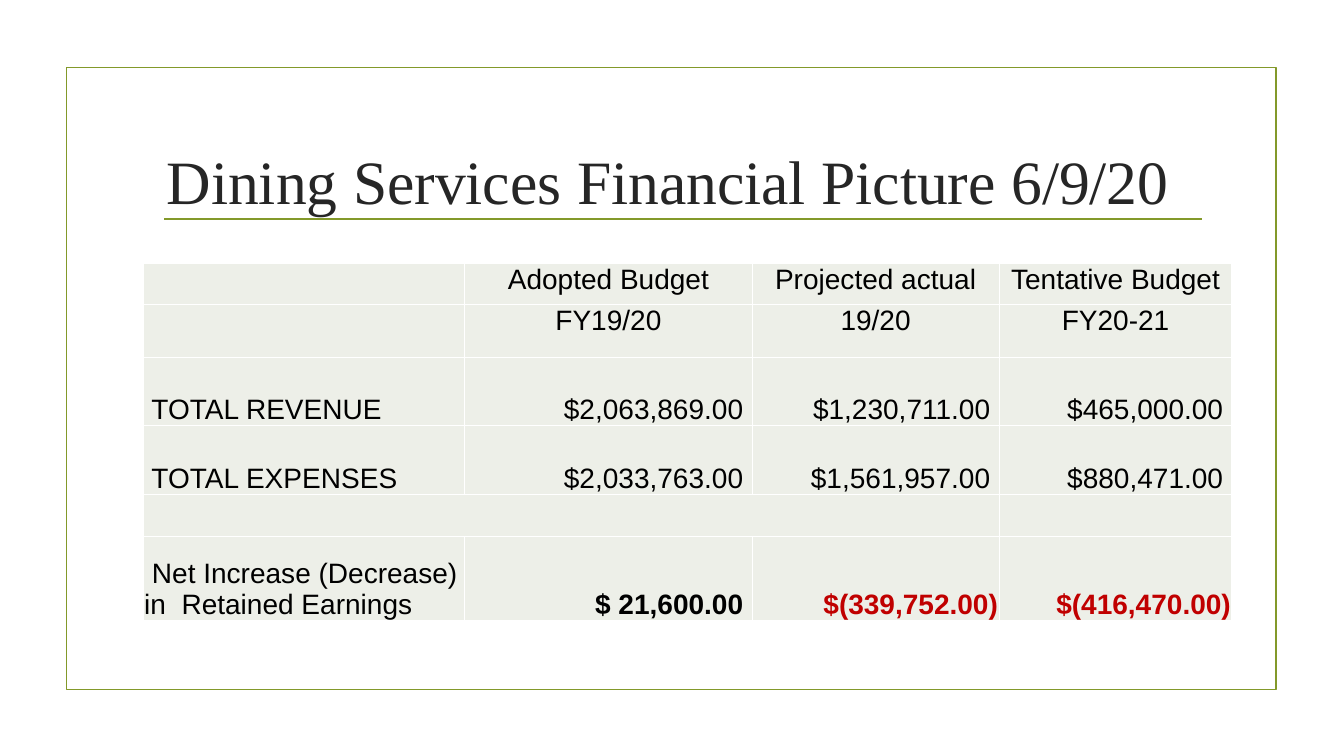
from lxml import etree
from pptx import Presentation
from pptx.dml.color import RGBColor
from pptx.enum.shapes import MSO_CONNECTOR, MSO_SHAPE
from pptx.enum.text import MSO_ANCHOR, PP_ALIGN
from pptx.oxml.ns import qn
from pptx.util import Inches, Pt

RECT = MSO_SHAPE.RECTANGLE
STRAIGHT = MSO_CONNECTOR.STRAIGHT
TOP, MIDDLE, BOTTOM = MSO_ANCHOR.TOP, MSO_ANCHOR.MIDDLE, MSO_ANCHOR.BOTTOM
LEFT, CENTER, RIGHT = PP_ALIGN.LEFT, PP_ALIGN.CENTER, PP_ALIGN.RIGHT

W, H = 13.33, 7.5
COLORS = {
    "olive": "83992A",
    "title": "262626",
    "text": "000000",
    "loss": "C00000",
    "cell": "EDEFE8",
    "grid": "FFFFFF",
}

# Table grid
TABLE_LEFT, TABLE_TOP = 1.42, 2.61
COLS = [3.19, 2.85, 2.45, 2.31]
ROWS = [0.41, 0.53, 0.67, 0.69, 0.41, 0.84]
HEADER_ROWS = 2
SPACER_ROW, NET_ROW = 4, 5
BUDGET = [
    ["", "Adopted Budget", "Projected actual", "Tentative Budget"],
    ["", "FY19/20", "19/20", "FY20-21"],
    [" TOTAL REVENUE", " $2,063,869.00 ", " $1,230,711.00 ", " $465,000.00 "],
    [" TOTAL EXPENSES", " $2,033,763.00 ", " $1,561,957.00 ", " $880,471.00 "],
    ["", "", "", ""],
    [" Net Increase (Decrease) in  Retained Earnings",
     "$ 21,600.00 ", " $(339,752.00)", " $(416,470.00)"],
]


def rgb(name):
    return RGBColor.from_string(COLORS[name])


def style_line(line):
    line.color.rgb = rgb("olive")
    line.width = Pt(1.25)


def style_text(p, font, size, color, align, bold=False):
    p.alignment = align
    p.font.name = font
    p.font.size = Pt(size)
    p.font.bold = bold
    p.font.color.rgb = rgb(color)


def add_frame(slide, x, y, w, h):
    sp = slide.shapes.add_shape(RECT, Inches(x), Inches(y), Inches(w), Inches(h))
    sp.shadow.inherit = False
    sp.fill.background()
    style_line(sp.line)


def add_rule(slide, x1, x2, y):
    rule = slide.shapes.add_connector(
        STRAIGHT, Inches(x1), Inches(y), Inches(x2), Inches(y))
    style_line(rule.line)
    etree.SubElement(rule._element.spPr, qn("a:effectLst"))


def add_title(slide, text, x, y, w, h):
    tf = slide.shapes.add_textbox(
        Inches(x), Inches(y), Inches(w), Inches(h)).text_frame
    tf.word_wrap = True
    tf.vertical_anchor = MIDDLE
    p = tf.paragraphs[0]
    p.text = text
    style_text(p, "Times New Roman", 44, "title", CENTER)


def set_borders(cell):
    tc_pr = cell._tc.get_or_add_tcPr()
    for i, side in enumerate(("lnL", "lnR", "lnT", "lnB")):
        ln = etree.Element(qn(f"a:{side}"), w=str(Pt(1)))
        fill = etree.SubElement(ln, qn("a:solidFill"))
        etree.SubElement(fill, qn("a:srgbClr"), val=COLORS["grid"])
        tc_pr.insert(i, ln)


def fill_cell(cell, text, anchor, align, color, bold):
    cell.fill.solid()
    cell.fill.fore_color.rgb = rgb("cell")
    set_borders(cell)
    cell.margin_left = cell.margin_right = cell.margin_top = Inches(0.01)
    cell.margin_bottom = 0
    cell.vertical_anchor = anchor
    p = cell.text_frame.paragraphs[0]
    p.text = text
    style_text(p, "Arial", 20, color, align, bold)


def add_budget_table(slide):
    table = slide.shapes.add_table(
        len(ROWS), len(COLS), Inches(TABLE_LEFT), Inches(TABLE_TOP),
        Inches(sum(COLS)), Inches(sum(ROWS))).table
    for col, width in zip(table.columns, COLS):
        col.width = Inches(width)
    for row, height in zip(table.rows, ROWS):
        row.height = Inches(height)
    for r, values in enumerate(BUDGET):
        header = r < HEADER_ROWS
        for c, text in enumerate(values):
            align = CENTER if header else RIGHT if c else LEFT
            fill_cell(table.cell(r, c), text, TOP if header else BOTTOM, align,
                      "loss" if "(" in text and c else "text",
                      r == NET_ROW and c > 0)
    table.cell(SPACER_ROW, 0).merge(table.cell(SPACER_ROW, 2))


def main():
    prs = Presentation()
    prs.slide_width, prs.slide_height = Inches(W), Inches(H)
    slide = prs.slides.add_slide(prs.slide_layouts[6])

    # Frame, title and rule
    add_frame(slide, 0.66, 0.67, 12, 6.17)
    add_rule(slide, 1.63, 11.92, 2.17)
    add_title(slide, "Dining Services Financial Picture 6/9/20",
              1.24, 1.07, 10.78, 1.43)

    # Budget comparison
    add_budget_table(slide)
    prs.save("out.pptx")


if __name__ == "__main__":
    main()
